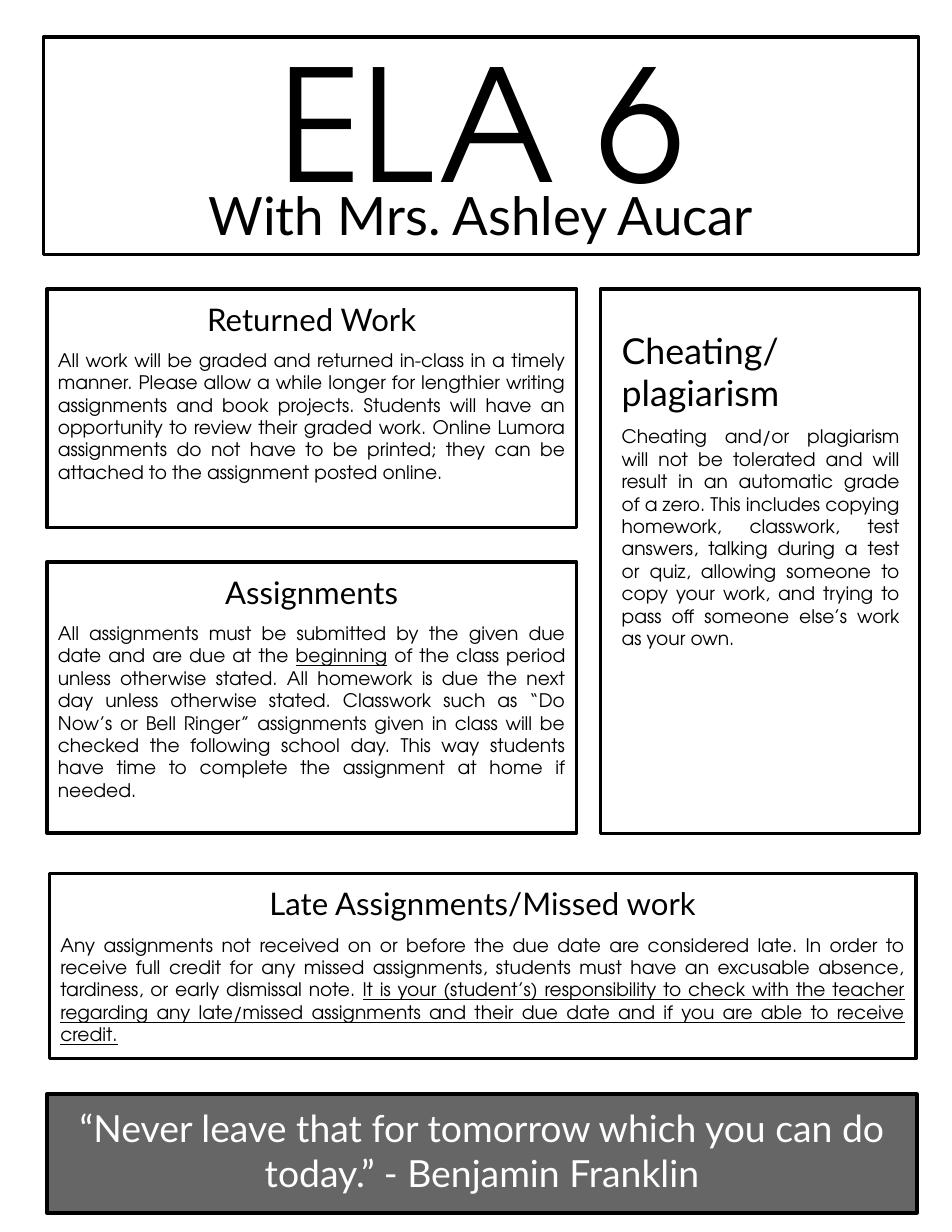
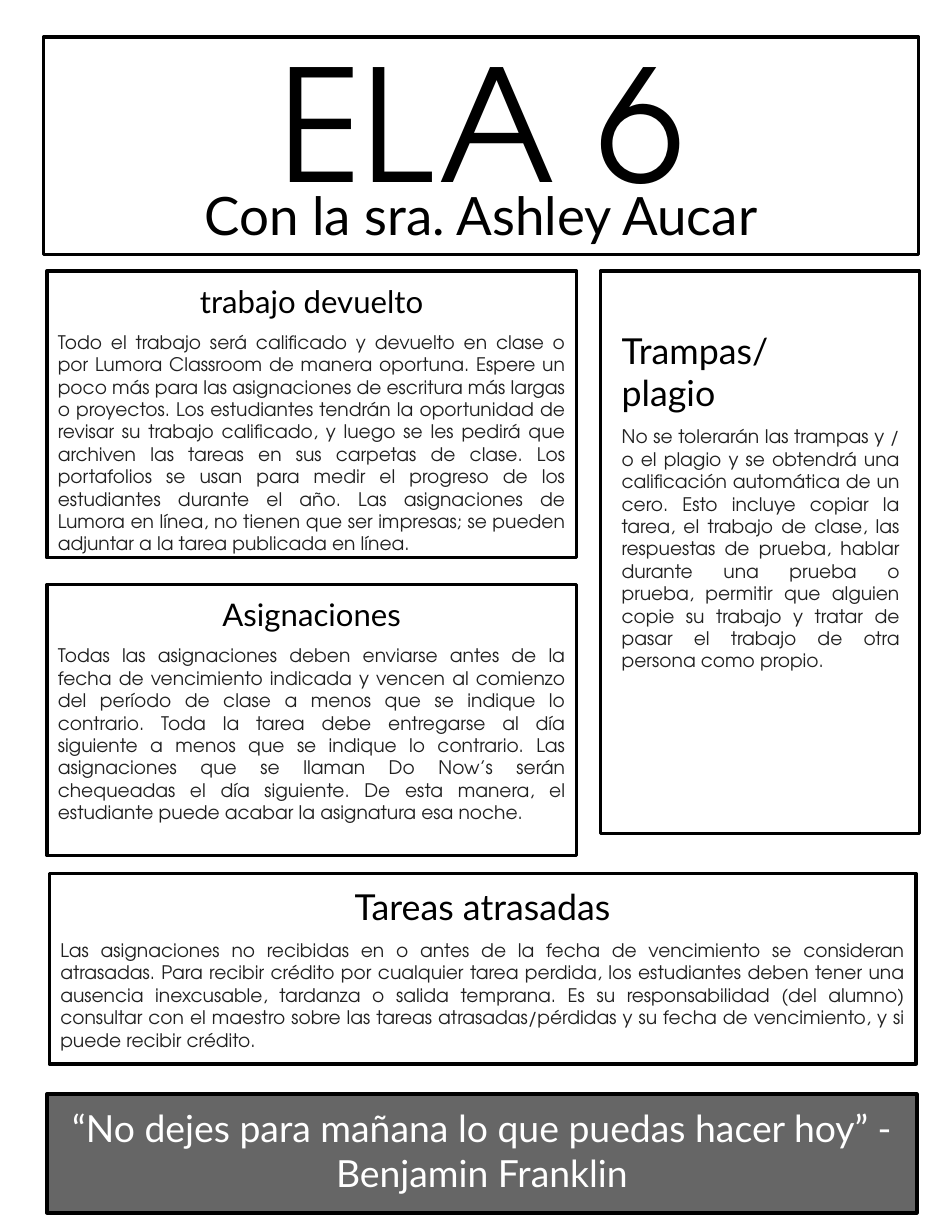
from pptx import Presentation
from pptx.dml.color import RGBColor
from pptx.enum.shapes import MSO_SHAPE as Shape
from pptx.enum.text import MSO_ANCHOR as Anchor, PP_ALIGN as Align
from pptx.util import Pt

COLORS = {"ink": "000000", "soft ink": "212121", "paper": "FFFFFF", "quote": "666666"}
HEADING_FONT, BODY_FONT = "Lato", "TeX Gyre Adventor"
INSET = 7.2

# Places are left, top, width, height in points
HEADER_PLACE = (28, 23.9, 562.5, 139.6)
CHEATING_TEXT_PLACE = (392.5, 203.8, 193, 284.4)
QUOTE_PLACE = (30.1, 703.4, 559.4, 76.3)
LEFT, LEFT_WIDTH = 30.1, 340.6
RIGHT, RIGHT_WIDTH = 386, 205.2
LATE_LEFT, LATE_TOP, LATE_WIDTH = 31.7, 561.6, 557.3
CHEATING_BOTTOM = 535.7

# Underscores surround underlined words
PAGES = [
    {
        "teacher": "With Mrs. Ashley Aucar",
        "body color": "ink",
        "columns top": 185.8,
        "cheating": (
            ["Cheating/", "plagiarism"],
            "Cheating and/or plagiarism will not be tolerated and will result in an "
            "automatic grade of a zero. This includes copying homework, classwork, test "
            "answers, talking during a test or quiz, allowing someone to copy your work, "
            "and trying to pass off someone else’s work as your own."),
        "returned height": 153.4,
        "returned": (
            "Returned Work",
            "All work will be graded and returned in-class in a timely manner. Please allow "
            "a while longer for lengthier writing assignments and book projects. Students "
            "will have an opportunity to review their graded work. Online Lumora assignments "
            "do not have to be printed; they can be attached to the assignment posted online."),
        "assignments top": 361.4,
        "assignments": (
            "Assignments",
            "All assignments must be submitted by the given due date and are due at the "
            "_beginning_ of the class period unless otherwise stated. All homework is due "
            "the next day unless otherwise stated. Classwork such as “Do Now’s or Bell "
            "Ringer” assignments given in class will be checked the following school day. "
            "This way students have time to complete the assignment at home if needed."),
        "late height": 118.8,
        "late size": 20,
        "late": (
            "Late Assignments/Missed work",
            "Any assignments not received on or before the due date are considered late. In "
            "order to receive full credit for any missed assignments, students must have an "
            "excusable absence, tardiness, or early dismissal note. _It is your (student’s) "
            "responsibility to check with the teacher regarding any late/missed assignments "
            "and their due date and if you are able to receive credit._"),
        "quote": "“Never leave that for tomorrow which you can do today.” - Benjamin Franklin",
    },
    {
        "teacher": "Con la sra. Ashley Aucar",
        "body color": "soft ink",
        "columns top": 174.2,
        "cheating": (
            ["Trampas/", "plagio"],
            "No se tolerarán las trampas y / o el plagio y se obtendrá una calificación "
            "automática de un cero. Esto incluye copiar la tarea, el trabajo de clase, las "
            "respuestas de prueba, hablar durante una prueba o prueba, permitir que alguien "
            "copie su trabajo y tratar de pasar el trabajo de otra persona como propio."),
        "returned height": 184.3,
        "returned": (
            "trabajo devuelto",
            "Todo el trabajo será calificado y devuelto en clase o por Lumora Classroom de "
            "manera oportuna. Espere un poco más para las asignaciones de escritura más "
            "largas o proyectos. Los estudiantes tendrán la oportunidad de revisar su "
            "trabajo calificado, y luego se les pedirá que archiven las tareas en sus "
            "carpetas de clase. Los portafolios se usan para medir el progreso de los "
            "estudiantes durante el año. Las asignaciones de Lumora en línea, no tienen que "
            "ser impresas; se pueden adjuntar a la tarea publicada en línea."),
        "assignments top": 375.8,
        "assignments": (
            "Asignaciones",
            "Todas las asignaciones deben enviarse antes de la fecha de vencimiento indicada "
            "y vencen al comienzo del período de clase a menos que se indique lo contrario. "
            "Toda la tarea debe entregarse al día siguiente a menos que se indique lo "
            "contrario. Las asignaciones que se llaman Do Now’s serán chequeadas el día "
            "siguiente. De esta manera, el estudiante puede acabar la asignatura esa noche."),
        "late height": 122.4,
        "late size": 23,
        "late": (
            "Tareas atrasadas",
            "Las asignaciones no recibidas en o antes de la fecha de vencimiento se "
            "consideran atrasadas. Para recibir crédito por cualquier tarea perdida, los "
            "estudiantes deben tener una ausencia inexcusable, tardanza o salida temprana. "
            "Es su responsabilidad (del alumno) consultar con el maestro sobre las tareas "
            "atrasadas/pérdidas y su fecha de vencimiento, y si puede recibir crédito."),
        "quote": "“No dejes para mañana lo que puedas hacer hoy” - Benjamin Franklin",
    },
]


def add_box(slide, place, fill="paper"):
    """Add a black-framed rectangle with its text starting at the top."""
    shape = slide.shapes.add_shape(Shape.RECTANGLE, *map(Pt, place))
    shape.shadow.inherit = False
    shape.fill.solid()
    shape.fill.fore_color.rgb = RGBColor.from_string(COLORS[fill])
    shape.line.color.rgb = RGBColor.from_string(COLORS["ink"])
    shape.line.width = Pt(2.25)
    return shape


def write(shape, lines, top_inset=INSET):
    """Fill a shape with (text, font, size, color, alignment, space before, line spacing)."""
    frame = shape.text_frame
    frame.word_wrap = True
    frame.vertical_anchor = Anchor.TOP
    frame.margin_left = frame.margin_right = Pt(INSET)
    frame.margin_top, frame.margin_bottom = Pt(top_inset), Pt(0)
    for index, (text, font, size, color, alignment, before, spacing) in enumerate(lines):
        paragraph = frame.add_paragraph() if index else frame.paragraphs[0]
        paragraph.alignment = alignment
        paragraph.space_before = Pt(before)
        paragraph.line_spacing = spacing
        paragraph.font.name, paragraph.font.size = font, Pt(size)
        paragraph.font.color.rgb = RGBColor.from_string(COLORS[color])
        for part_index, part in enumerate(text.split("_")):
            if part:
                run = paragraph.add_run()
                run.text = part
                if part_index % 2:
                    run.font.underline = True


presentation = Presentation()
presentation.slide_width, presentation.slide_height = Pt(612), Pt(792)

for page in PAGES:
    slide = presentation.slides.add_slide(presentation.slide_layouts[6])
    body_style = (BODY_FONT, 12, page["body color"], Align.JUSTIFY, 7.2, 1.0)
    columns_top = page["columns top"]

    header = add_box(slide, HEADER_PLACE)
    write(header, [
        ("ELA 6", BODY_FONT, 100, "ink", Align.CENTER, 0, 0.6),
        (page["teacher"], HEADING_FONT, 34, "ink", Align.CENTER, 0, 0.6),
    ], top_inset=36)

    add_box(slide, (RIGHT, columns_top, RIGHT_WIDTH, CHEATING_BOTTOM - columns_top))
    titles, body = page["cheating"]
    cheating_text = slide.shapes.add_textbox(*map(Pt, CHEATING_TEXT_PLACE))
    write(cheating_text, [(title, HEADING_FONT, 23, "ink", Align.LEFT, 0, 1.0) for title in titles]
          + [(body, *body_style)])

    sections = [
        ("returned", (LEFT, columns_top, LEFT_WIDTH, page["returned height"]), 20),
        ("assignments", (LEFT, page["assignments top"], LEFT_WIDTH, 174.2), 20),
        ("late", (LATE_LEFT, LATE_TOP, LATE_WIDTH, page["late height"]), page["late size"]),
    ]
    for name, place, title_size in sections:
        title, body = page[name]
        write(add_box(slide, place), [
            (title, HEADING_FONT, title_size, "ink", Align.CENTER, 0, 1.0),
            (body, *body_style),
        ])

    quote = add_box(slide, QUOTE_PLACE, "quote")
    write(quote, [(page["quote"], HEADING_FONT, 24, "paper", Align.CENTER, 0, 1.0)])

presentation.save("out.pptx")
